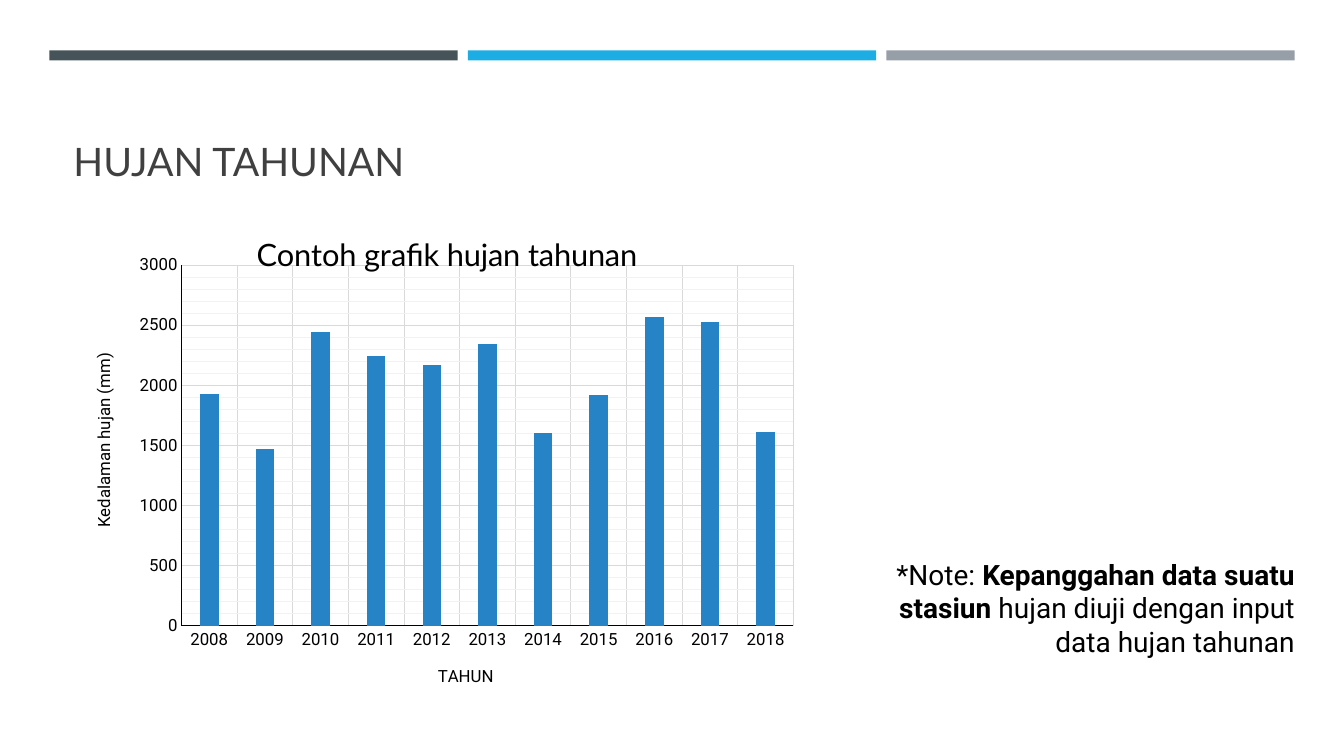
from dataclasses import dataclass

from lxml.etree import SubElement
from pptx import Presentation
from pptx.chart.data import CategoryChartData
from pptx.dml.color import RGBColor
from pptx.enum.chart import XL_CHART_TYPE as ChartType, XL_TICK_MARK as Tick
from pptx.enum.shapes import MSO_SHAPE as Shape
from pptx.enum.text import MSO_ANCHOR as Anchor, PP_ALIGN as Align
from pptx.oxml.ns import qn
from pptx.util import Inches, Pt


@dataclass(frozen=True)
class Theme:
    heading_font: str = "Lato"
    body_font: str = "Roboto"
    heading: str = "404040"
    text: str = "000000"
    column: str = "2683C6"
    major_grid: str = "D9D9D9"
    minor_grid: str = "F2F2F2"
    heading_size: int = 28
    chart_title_size: int = 22
    note_size: int = 20
    axis_size: int = 12
    line_width: float = 0.75


@dataclass(frozen=True)
class Bar:
    left: float
    color: str


THEME = Theme()
BARS = [Bar(0.49, "465359"), Bar(4.64, "1CADE4"), Bar(8.79, "969FA7")]
CHART_W, CHART_H = 7.29, 4.91
RAINFALL = {
    "2008": 1930, "2009": 1470, "2010": 2440, "2011": 2240,
    "2012": 2170, "2013": 2340, "2014": 1600, "2015": 1920,
    "2016": 2570, "2017": 2530, "2018": 1610,
}
NOTE = [
    ("*Note: ", False),
    ("Kepanggahan data suatu stasiun ", True),
    ("hujan diuji dengan input data hujan tahunan", False),
]


def style_font(font, name: str, size: int, color: str) -> None:
    font.name, font.size, font.bold = name, Pt(size), False
    font.color.rgb = RGBColor.from_string(color)


def style_line(line, color: str) -> None:
    line.color.rgb = RGBColor.from_string(color)
    line.width = Pt(THEME.line_width)


def style_minor_grid(axis, color: str) -> None:
    axis.has_minor_gridlines = True
    grid = axis._element.find(qn("c:minorGridlines"))
    ln = SubElement(SubElement(grid, qn("c:spPr")), qn("a:ln"))
    ln.set("w", str(Pt(THEME.line_width)))
    SubElement(SubElement(ln, qn("a:solidFill")), qn("a:srgbClr")).set("val", color)


def add_bar(slide, bar: Bar) -> None:
    sp = slide.shapes.add_shape(
        Shape.RECTANGLE, Inches(bar.left), Inches(0.5), Inches(4.05), Inches(0.1))
    sp.shadow.inherit = False
    sp.fill.solid()
    sp.fill.fore_color.rgb = RGBColor.from_string(bar.color)
    sp.line.fill.background()


def add_text(slide, left: float, top: float, width: float, height: float):
    box = slide.shapes.add_textbox(
        Inches(left), Inches(top), Inches(width), Inches(height))
    box.text_frame.word_wrap = True
    return box.text_frame


def set_layout(parent, index: int, **values: float | str) -> None:
    """Place a chart part by fractions of the chart area."""
    for old in parent.findall(qn("c:layout")):
        parent.remove(old)
    layout = SubElement(parent, qn("c:layout"))
    parent.insert(index, layout)
    manual = SubElement(layout, qn("c:manualLayout"))
    for tag, value in values.items():
        SubElement(manual, qn(f"c:{tag}")).set("val", str(value))


def set_title(title, text: str, font: str, size: int, x: float, y: float) -> None:
    """Fill and place the title of a chart or an axis."""
    p = title.text_frame.paragraphs[0]
    p.text = text
    style_font(p.font, font, size, THEME.text)
    set_layout(title._element, 1, xMode="edge", yMode="edge", x=x, y=y)


def add_rain_chart(slide) -> None:
    data = CategoryChartData(number_format="0")
    data.categories = list(RAINFALL)
    data.add_series("Series 1", list(RAINFALL.values()))
    chart = slide.shapes.add_chart(
        ChartType.COLUMN_CLUSTERED, Inches(0.74), Inches(2),
        Inches(CHART_W), Inches(CHART_H), data).chart
    chart.has_legend = False
    style_font(chart.font, THEME.body_font, THEME.axis_size, THEME.text)

    # Columns
    plot = chart.plots[0]
    plot.gap_width, plot.vary_by_categories = 199, False
    fill = plot.series[0].format.fill
    fill.solid()
    fill.fore_color.rgb = RGBColor.from_string(THEME.column)

    # Axes and grid
    years, depth = chart.category_axis, chart.value_axis
    for axis in (years, depth):
        axis.major_tick_mark = axis.minor_tick_mark = Tick.NONE
        axis.has_major_gridlines = True
        style_line(axis.major_gridlines.format.line, THEME.major_grid)
        style_line(axis.format.line, THEME.text)
        style_font(axis.tick_labels.font, THEME.body_font, THEME.axis_size, THEME.text)
    depth.minimum_scale, depth.maximum_scale = 0, 3000
    depth.major_unit, depth.minor_unit = 500, 100
    style_minor_grid(depth, THEME.minor_grid)
    depth.tick_labels.number_format = "0"
    depth.tick_labels.number_format_is_linked = False

    # Titles and plot position
    set_title(chart.chart_title, "Contoh grafik hujan tahunan", THEME.heading_font,
              THEME.chart_title_size, 0.24, 0.05)
    set_title(years.axis_title, "TAHUN", THEME.body_font, THEME.axis_size, 0.49, 0.93)
    set_title(depth.axis_title, "Kedalaman hujan (mm)", THEME.body_font,
              THEME.axis_size, 0.02, 0.3)
    depth.axis_title.text_frame._txBody.bodyPr.set("rot", "-5400000")
    set_layout(chart._chartSpace.chart.plotArea, 0,
               layoutTarget="inner", xMode="edge", yMode="edge",
               x=1.06 / CHART_W, y=0.63 / CHART_H,
               w=6.07 / CHART_W, h=3.58 / CHART_H)


def main() -> None:
    prs = Presentation()
    prs.slide_width, prs.slide_height = Inches(13.33), Inches(7.5)
    slide = prs.slides.add_slide(prs.slide_layouts[6])

    # Top bars
    for bar in BARS:
        add_bar(slide, bar)

    # Heading
    tf = add_text(slide, 0.63, 0.8, 12.06, 1.08)
    tf.vertical_anchor = Anchor.BOTTOM
    p = tf.paragraphs[0]
    p.text = "HUJAN TAHUNAN"
    style_font(p.font, THEME.heading_font, THEME.heading_size, THEME.heading)

    add_rain_chart(slide)

    # Note
    p = add_text(slide, 8.55, 5.48, 4.39, 1.11).paragraphs[0]
    p.alignment = Align.RIGHT
    style_font(p.font, THEME.body_font, THEME.note_size, THEME.text)
    for text, bold in NOTE:
        r = p.add_run()
        r.text = text
        style_font(r.font, THEME.body_font, THEME.note_size, THEME.text)
        r.font.bold = bold

    prs.save("out.pptx")


if __name__ == "__main__":
    main()
